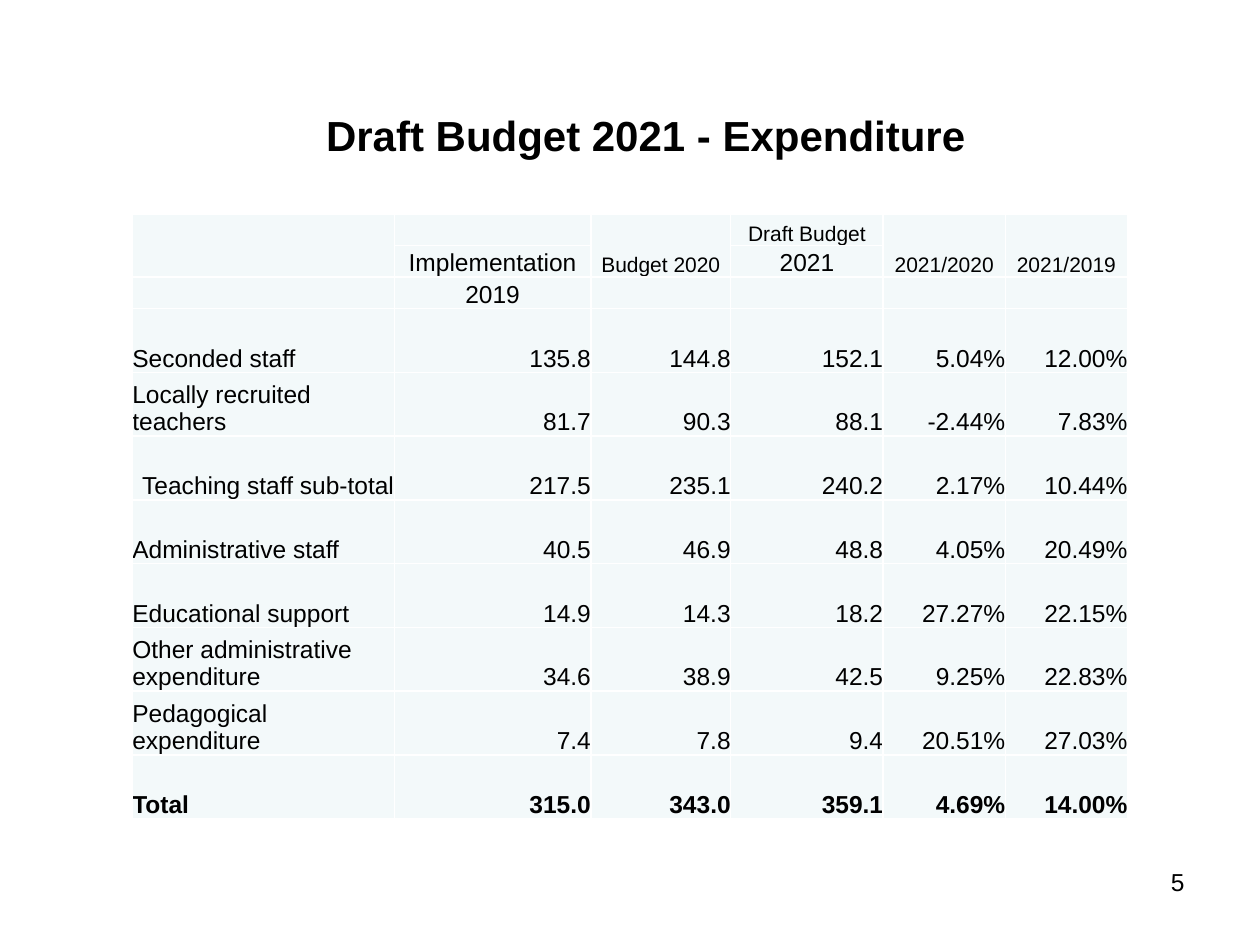
from lxml import etree
from pptx import Presentation
from pptx.dml.color import RGBColor
from pptx.enum.text import MSO_ANCHOR, PP_ALIGN
from pptx.oxml.ns import qn
from pptx.util import Inches, Pt

LEFT, CENTER, RIGHT = PP_ALIGN.LEFT, PP_ALIGN.CENTER, PP_ALIGN.RIGHT
MIDDLE, BOTTOM = MSO_ANCHOR.MIDDLE, MSO_ANCHOR.BOTTOM
BLACK = RGBColor(0x00, 0x00, 0x00)
WHITE = RGBColor(0xFF, 0xFF, 0xFF)
PALE_TEAL = RGBColor(0xF3, 0xF9, 0xFA)
FONT_NAME = "Arial"
BODY_SIZE, SMALL_SIZE, TITLE_SIZE = 14, 12, 24

TITLE_BOX = (0.67, 0.6, 8.91, 0.94)
TABLE_BOX = (1.05, 1.7, 7.9, 4.8)
NUMBER_BOX = (7.17, 6.83, 2.33, 0.52)

COLUMN_WIDTHS = [2.08, 1.56, 1.11, 1.21, 0.97, 0.97]
HEADER_ROWS = 3
HEADER_HEIGHT = 0.25
MERGED_COLUMNS = [0, 2, 4, 5]
# (row, column, text, size)
HEADERS = [
    (1, 1, "Implementation", BODY_SIZE),
    (2, 1, "2019", BODY_SIZE),
    (0, 2, "Budget 2020", SMALL_SIZE),
    (0, 3, "Draft Budget", SMALL_SIZE),
    (1, 3, "2021", BODY_SIZE),
    (0, 4, "2021/2020", SMALL_SIZE),
    (0, 5, "2021/2019", SMALL_SIZE),
]
SUBTOTAL, TOTAL = "Teaching staff sub-total", "Total"
EXPENDITURE = [
    ("Seconded staff", "135.8", "144.8", "152.1", "5.04%", "12.00%"),
    ("Locally recruited teachers", "81.7", "90.3", "88.1", "-2.44%", "7.83%"),
    (SUBTOTAL, "217.5", "235.1", "240.2", "2.17%", "10.44%"),
    ("Administrative staff", "40.5", "46.9", "48.8", "4.05%", "20.49%"),
    ("Educational support", "14.9", "14.3", "18.2", "27.27%", "22.15%"),
    ("Other administrative expenditure", "34.6", "38.9", "42.5", "9.25%", "22.83%"),
    ("Pedagogical expenditure", "7.4", "7.8", "9.4", "20.51%", "27.03%"),
    (TOTAL, "315.0", "343.0", "359.1", "4.69%", "14.00%"),
]


def write_text(text_frame, text, size, alignment, bold=False):
    paragraph = text_frame.paragraphs[0]
    paragraph.alignment = alignment
    run = paragraph.add_run()
    run.text = text
    run.font.name = FONT_NAME
    run.font.size = Pt(size)
    run.font.bold = bold
    run.font.color.rgb = BLACK


def style_cell(cell):
    cell.margin_left = cell.margin_right = cell.margin_top = cell.margin_bottom = 0
    cell.vertical_anchor = BOTTOM
    properties = cell._tc.get_or_add_tcPr()
    for side in ("a:lnL", "a:lnR", "a:lnT", "a:lnB"):
        line = etree.SubElement(properties, qn(side), w=str(Pt(1)))
        line_fill = etree.SubElement(line, qn("a:solidFill"))
        etree.SubElement(line_fill, qn("a:srgbClr"), val=str(WHITE))
    cell.fill.solid()
    cell.fill.fore_color.rgb = PALE_TEAL
    # Keeps empty cells from stretching the low header rows
    paragraph = cell.text_frame.paragraphs[0]
    etree.SubElement(paragraph._p, qn("a:endParaRPr"), sz=str(SMALL_SIZE * 100))


def add_title(slide, box):
    title = slide.shapes.title
    title.left, title.top, title.width, title.height = map(Inches, box)
    title.text_frame.vertical_anchor = MIDDLE
    write_text(title.text_frame, "Draft Budget 2021 - Expenditure", TITLE_SIZE, CENTER, bold=True)


def add_expenditure_table(slide, box):
    row_count = HEADER_ROWS + len(EXPENDITURE)
    frame = slide.shapes.add_table(row_count, len(COLUMN_WIDTHS), *map(Inches, box))
    table = frame.table
    table.first_row = table.horz_banding = False
    for column, width in zip(table.columns, COLUMN_WIDTHS):
        column.width = Inches(width)
    body_height = (box[3] - HEADER_ROWS * HEADER_HEIGHT) / len(EXPENDITURE)
    for index, row in enumerate(table.rows):
        row.height = Inches(HEADER_HEIGHT if index < HEADER_ROWS else body_height)
    for cell in table.iter_cells():
        style_cell(cell)
    for column in MERGED_COLUMNS:
        table.cell(0, column).merge(table.cell(1, column))

    for row, column, text, size in HEADERS:
        write_text(table.cell(row, column).text_frame, text, size, CENTER)
    for row, values in enumerate(EXPENDITURE, HEADER_ROWS):
        label = values[0]
        for column, text in enumerate(values):
            alignment = LEFT if column == 0 and label != SUBTOTAL else RIGHT
            write_text(table.cell(row, column).text_frame, text, BODY_SIZE, alignment, bold=label == TOTAL)


def add_page_number(slide, box):
    text_box = slide.shapes.add_textbox(*map(Inches, box))
    text_box.text_frame.word_wrap = True
    write_text(text_box.text_frame, "5", BODY_SIZE, RIGHT)


def main():
    presentation = Presentation()
    presentation.slide_width, presentation.slide_height = Inches(10), Inches(7.5)
    title_only_layout = presentation.slide_layouts[5]
    slide = presentation.slides.add_slide(title_only_layout)
    add_title(slide, TITLE_BOX)
    add_expenditure_table(slide, TABLE_BOX)
    add_page_number(slide, NUMBER_BOX)
    presentation.save("out.pptx")


if __name__ == "__main__":
    main()
